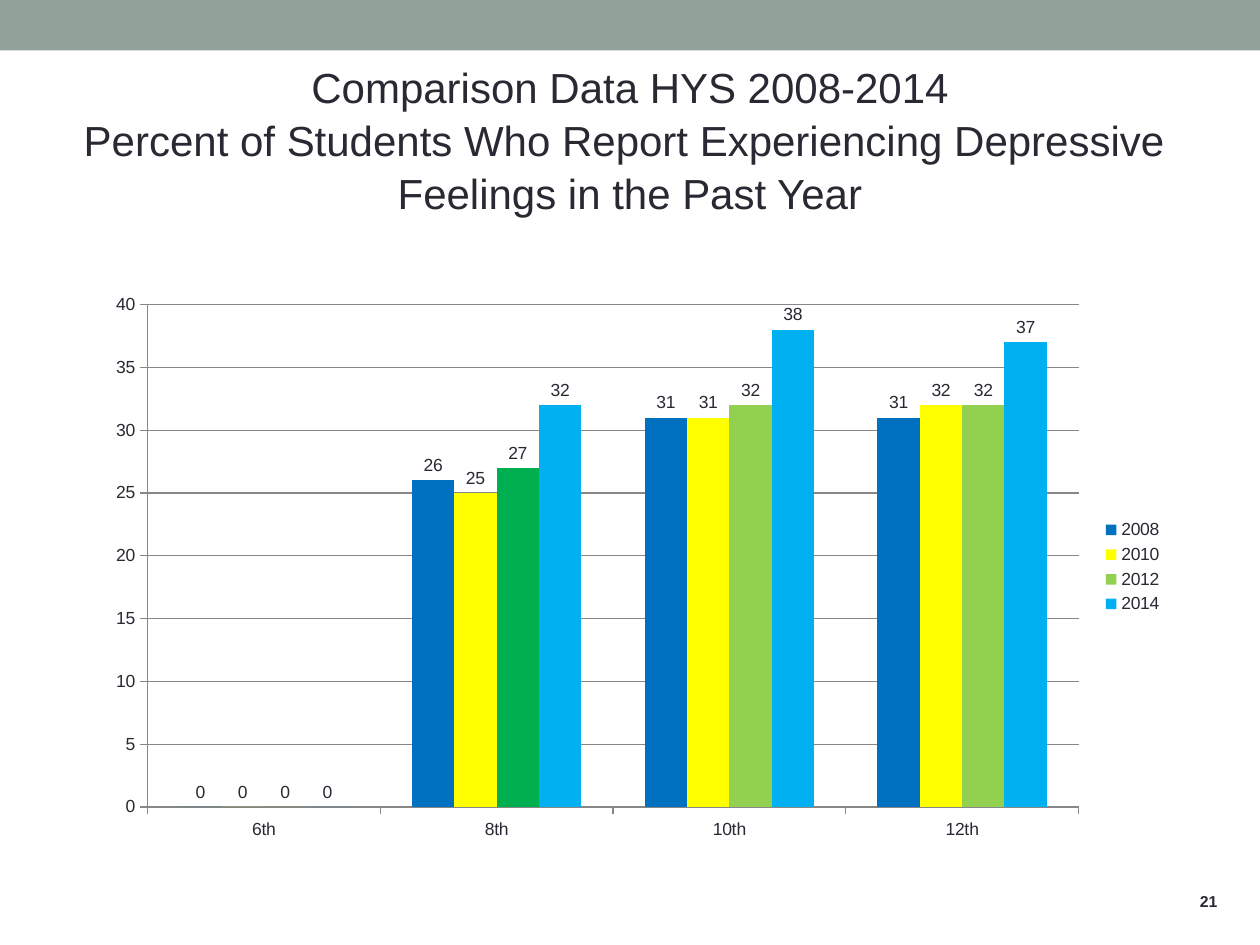
from pptx import Presentation
from pptx import util as u
from pptx.chart.data import CategoryChartData
from pptx.dml.color import RGBColor
from pptx.enum import chart as charts, shapes, text

SCALE = 9144  # EMU per px, 100 px to the inch
FONT = "Arial"
INK = RGBColor(0x29, 0x29, 0x34)
SAGE = RGBColor(0x93, 0xA2, 0x99)
GRAY = RGBColor(0x87, 0x87, 0x87)
BLUE = RGBColor(0x00, 0x70, 0xC0)
YELLOW = RGBColor(0xFF, 0xFF, 0x00)
LIME = RGBColor(0x92, 0xD0, 0x50)
GREEN = RGBColor(0x00, 0xB0, 0x50)
SKY = RGBColor(0x00, 0xB0, 0xF0)

GRADES = ["6th", "8th", "10th", "12th"]
YEARS = [
    ("2008", [0, 26, 31, 31], BLUE),
    ("2010", [0, 25, 31, 32], YELLOW),
    ("2012", [0, 27, 32, 32], LIME),
    ("2014", [0, 32, 38, 37], SKY),
]


def px(*lengths):
    return [u.Emu(length * SCALE) for length in lengths]


def format_font(font, size, bold=False):
    font.name = FONT
    font.size = u.Pt(size)
    font.bold = bold
    font.color.rgb = INK


def write(frame, lines, size, align, bold=False, spacing=None):
    for index, line in enumerate(lines):
        paragraph = frame.paragraphs[0] if index == 0 else frame.add_paragraph()
        paragraph.alignment = align
        paragraph.line_spacing = spacing
        run = paragraph.add_run()
        run.text = line
        format_font(run.font, size, bold)


class SlideBuilder:
    def __init__(self, slide):
        self.slide = slide

    def band(self, *box):
        shape = self.slide.shapes.add_shape(shapes.MSO_SHAPE.RECTANGLE, *px(*box))
        shape.shadow.inherit = False
        shape.fill.solid()
        shape.fill.fore_color.rgb = SAGE
        shape.line.fill.background()

    def title(self, lines, *box):
        shape = self.slide.shapes.title
        shape.left, shape.top, shape.width, shape.height = px(*box)
        frame = shape.text_frame
        frame.word_wrap = False
        frame.auto_size = text.MSO_AUTO_SIZE.SHAPE_TO_FIT_TEXT
        frame.vertical_anchor = text.MSO_ANCHOR.TOP
        write(frame, lines, 24, text.PP_ALIGN.CENTER, spacing=1.05)

    def page_number(self, number, *box):
        frame = self.slide.shapes.add_textbox(*px(*box)).text_frame
        frame.word_wrap = True
        frame.margin_top = frame.margin_bottom = 0
        frame.vertical_anchor = text.MSO_ANCHOR.MIDDLE
        write(frame, [number], 9, text.PP_ALIGN.RIGHT, bold=True)

    def column_chart(self, categories, series_rows, *box):
        data = CategoryChartData()
        data.categories = categories
        for name, values, _ in series_rows:
            data.add_series(name, values)
        chart = self.slide.shapes.add_chart(
            charts.XL_CHART_TYPE.COLUMN_CLUSTERED, *px(*box), data).chart
        format_font(chart.font, 10)
        chart.has_title = False
        chart.has_legend = True
        chart.legend.position = charts.XL_LEGEND_POSITION.RIGHT
        chart.legend.include_in_layout = False

        for axis in (chart.category_axis, chart.value_axis):
            axis.major_tick_mark = charts.XL_TICK_MARK.OUTSIDE
            axis.format.line.color.rgb = GRAY
        value_axis = chart.value_axis
        value_axis.minimum_scale, value_axis.maximum_scale = 0, 40
        value_axis.major_unit = 5
        value_axis.has_major_gridlines = True
        value_axis.major_gridlines.format.line.color.rgb = GRAY

        plot = chart.plots[0]
        plot.gap_width = 150
        plot.overlap = 0
        plot.vary_by_categories = False
        for series, (_, _, color) in zip(plot.series, series_rows):
            series.invert_if_negative = False
            self.fill_bar(series, color)
            labels = series.data_labels
            labels.show_value = True
            labels.position = charts.XL_LABEL_POSITION.OUTSIDE_END
            format_font(labels.font, 10)
        return chart

    def fill_bar(self, bar, color):
        bar.format.fill.solid()
        bar.format.fill.fore_color.rgb = color


def main():
    presentation = Presentation()
    presentation.slide_width, presentation.slide_height = px(1000, 750)
    title_only = presentation.slide_layouts[5]
    builder = SlideBuilder(presentation.slides.add_slide(title_only))

    builder.band(0, 0, 1000, 40)
    builder.title([
        "Comparison Data HYS 2008-2014",
        "Percent of Students Who Report Experiencing Depressive ",
        "Feelings in the Past Year",
    ], 52, 42, 896, 131)
    builder.page_number("21", 738, 708, 238, 15)
    chart = builder.column_chart(GRADES, YEARS, 75, 225, 858, 450)
    eighth_grade_2012 = chart.plots[0].series[2].points[1]
    builder.fill_bar(eighth_grade_2012, GREEN)

    presentation.save("out.pptx")


if __name__ == "__main__":
    main()
